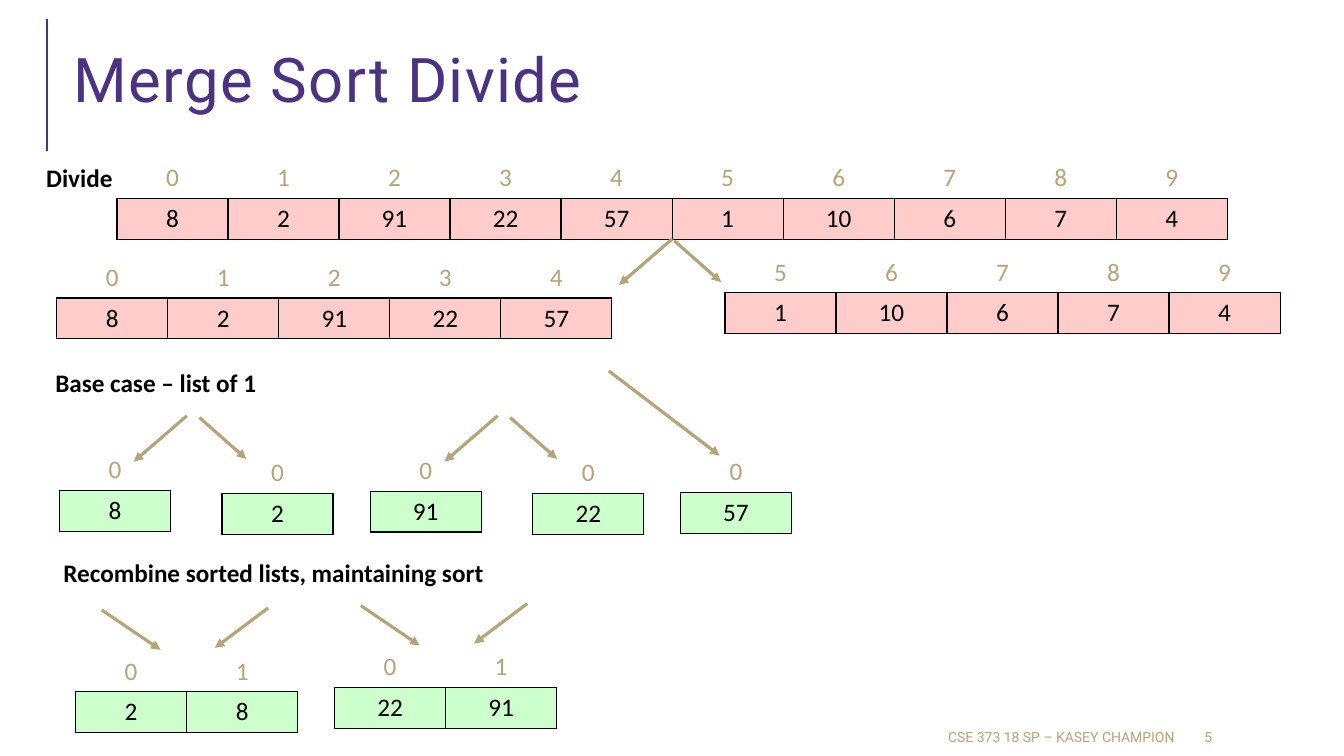
from pptx import Presentation
from pptx.util import Pt
from pptx.dml.color import RGBColor as RGB
from pptx.enum.shapes import MSO_CONNECTOR as CONN
from pptx.enum.text import MSO_ANCHOR as ANCHOR, PP_ALIGN as ALIGN
from pptx.oxml import parse_xml
from pptx.oxml.ns import nsdecls
from lxml.etree import SubElement

C = {"purple": "4C3282", "gold": "B6A479", "black": "000000", "white": "FFFFFF",
     "pink": "FFCCCC", "green": "CCFFCC"}
CELL_W, CELL_H = 79.34, 29.2

prs = Presentation()
prs.slide_width, prs.slide_height = Pt(960), Pt(540)
s = prs.slides.add_slide(prs.slide_layouts[5])


def add_text(tf, text, size, font, color, bold=False, align=ALIGN.LEFT):
    """Put one formatted run in the first paragraph and return the run."""
    p = tf.paragraphs[0]
    p.alignment = align
    r = p.add_run()
    r.text = text
    r.font.size, r.font.name, r.font.bold = Pt(size), font, bold
    r.font.color.rgb = RGB.from_string(C[color])
    return r


def add_line(x1, y1, x2, y2, color, width, arrow=True):
    """Draw a shadowless line, with a triangle at its end if arrow is set."""
    line = s.shapes.add_connector(CONN.STRAIGHT, Pt(x1), Pt(y1), Pt(x2), Pt(y2))
    line.line.color.rgb = RGB.from_string(C[color])
    line.line.width = Pt(width)
    if arrow:
        ln = line.line._get_or_add_ln()
        ln.append(parse_xml(f'<a:tailEnd {nsdecls("a")} type="triangle"/>'))
    spPr = line._element.spPr
    spPr.append(parse_xml(f'<a:effectLst {nsdecls("a")}/>'))


# Title and its side rule
add_line(33.8, 108, 33.8, 13.7, "purple", 1.5, arrow=False)
title = s.shapes.title
title.left, title.top, title.width, title.height = Pt(45.4), Pt(20.9), Pt(880.6), Pt(79.9)
tf = title.text_frame
tf.word_wrap = True
tf.vertical_anchor = ANCHOR.MIDDLE
r = add_text(tf, "Merge Sort Divide", 44, "Roboto", "purple")
r._r.get_or_add_rPr().set("spc", "100")
tf.paragraphs[0].line_spacing = 0.8

# Arrays: left, top, first index, values, fill
numbers = [8, 2, 91, 22, 57, 1, 10, 6, 7, 4]
arrays = [
    (83.5, 112.5, 0, numbers, "pink"),
    (40.5, 183.6, 0, numbers[:5], "pink"),
    (517.8, 180, 5, numbers[5:], "pink"),
    (42.5, 321.3, 0, [8], "green"),
    (158.5, 323.4, 0, [2], "green"),
    (264.4, 321.6, 0, [91], "green"),
    (380.6, 323.4, 0, [22], "green"),
    (486, 322.7, 0, [57], "green"),
    (54, 465, 0, [2, 8], "green"),
    (239, 461.8, 0, [22, 91], "green"),
]
for x, y, first, values, fill in arrays:
    n = len(values)
    table = s.shapes.add_table(2, n, Pt(x), Pt(y), Pt(CELL_W * n), Pt(CELL_H * 2)).table
    table.first_row = table.horz_banding = False
    for row in table.rows:
        row.height = Pt(CELL_H)
    for col, value in enumerate(values):
        table.columns[col].width = Pt(CELL_W)
        index_cell, value_cell = table.cell(0, col), table.cell(1, col)
        index_cell.fill.background()
        value_cell.fill.solid()
        value_cell.fill.fore_color.rgb = RGB.from_string(C[fill])
        for cell, text, color, edge in ((index_cell, first + col, "gold", "white"),
                                        (value_cell, value, "black", "black")):
            cell.vertical_anchor = ANCHOR.MIDDLE
            add_text(cell.text_frame, str(text), 18, "Calibri", color, align=ALIGN.CENTER)
            tcPr = cell._tc.get_or_add_tcPr()
            for i, side in enumerate("LRTB"):
                hue = C["black" if side == "B" else edge]
                tcPr.insert(i, parse_xml(
                    f'<a:ln{side} {nsdecls("a")} w="12700"><a:solidFill>'
                    f'<a:srgbClr val="{hue}"/></a:solidFill></a:ln{side}>'))

# Step labels
for x, y, w, text in ((25.9, 112.3, 63.4, "Divide"),
                      (32.4, 258.8, 159.8, "Base case – list of 1"),
                      (38.2, 394.6, 325.4, "Recombine sorted lists, maintaining sort")):
    tf = s.shapes.add_textbox(Pt(x), Pt(y), Pt(w), Pt(28.8)).text_frame
    tf.word_wrap = False
    add_text(tf, text, 18, "Calibri", "black", bold=True)

# Split arrows: apex, then gap to the start of the right-hand arrow
for x, y, gap in ((480.2, 170.7, 1.5), (133.5, 297, 9), (355.5, 297, 9)):
    add_line(x, y, x - 38, y + 32.8, "gold", 2.25)
    add_line(x + gap, y + 1.3, x + gap + 33.4, y + 30.8, "gold", 2.25)
add_line(434.9, 265, 514.1, 325.4, "gold", 2.25)

# Merge arrows
for x, y in ((72.7, 435.7), (257.8, 432.6)):
    add_line(x, y, x + 42, y + 28.5, "gold", 2.25)
    add_line(x + 118.8, y - 1.4, x + 80.8, y + 27.1, "gold", 2.25)

# Footer and page number
for x, w, text, align in ((381.6, 464.4, "CSE 373 18 SP – KASEY CHAMPION", ALIGN.RIGHT),
                          (853.2, 76.3, "5", ALIGN.LEFT)):
    tf = s.shapes.add_textbox(Pt(x), Pt(515.5), Pt(w), Pt(21.6)).text_frame
    tf.word_wrap = True
    tf.vertical_anchor = ANCHOR.MIDDLE
    add_text(tf, text, 10, "Roboto", "gold", align=align)

prs.save("out.pptx")
